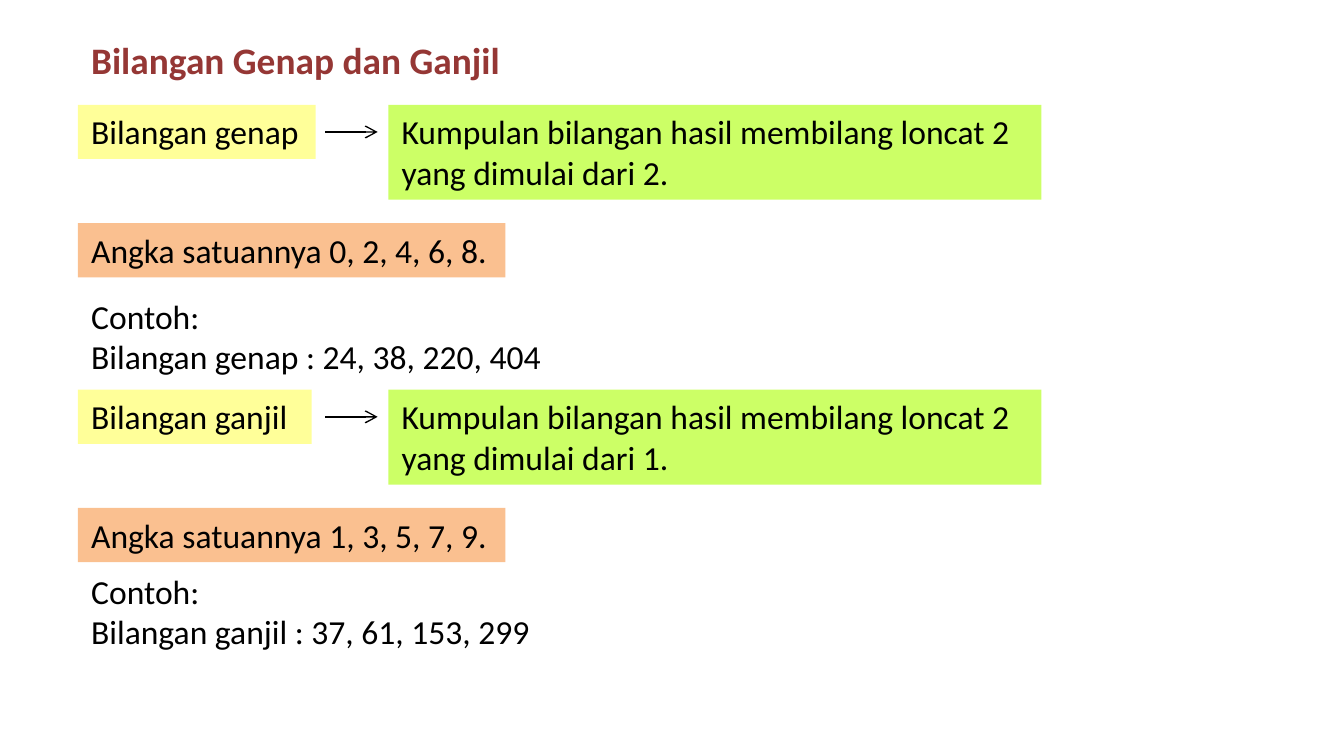
from dataclasses import dataclass
from typing import Optional

from lxml import etree
from pptx import Presentation, util as u
from pptx.dml import color
from pptx.enum import shapes, text
from pptx.oxml import ns


@dataclass(frozen=True)
class Theme:
    font: str = "Calibri"
    title_size: float = 20
    body_size: float = 18
    title: str = "953735"
    ink: str = "000000"
    term: str = "FFFF99"
    meaning: str = "CCFF66"
    digits: str = "FAC090"
    line_width: float = 0.75


@dataclass(frozen=True)
class Section:
    top: float
    term: str
    term_width: float
    start: int
    digits: str
    examples: str
    example_offset: float
    example_width: float


THEME = Theme()
LEFT = 41.76
MEANING_LEFT = 208.08
ARROW_START, ARROW_END = 174.24, 202.32
ONE_LINE, TWO_LINES = 29.08, 50.9
DIGITS_OFFSET = 63.36

SECTIONS = [
    Section(56.16, "Bilangan genap", 127.44, 2, "0, 2, 4, 6, 8", "24, 38, 220, 404", 98.64, 258.48),
    Section(208.8, "Bilangan ganjil", 125.28, 1, "1, 3, 5, 7, 9", "37, 61, 153, 299", 93.6, 252.72),
]


def add_text(page, content: str, left: float, top: float, width: float, height: float, *,
             fill: Optional[str] = None, size: float = THEME.body_size,
             ink: str = THEME.ink, bold: bool = False, wrap: bool = False) -> None:
    box = page.shapes.add_textbox(u.Pt(left), u.Pt(top), u.Pt(width), u.Pt(height))
    if fill:
        box.fill.solid()
        box.fill.fore_color.rgb = color.RGBColor.from_string(fill)
    frame = box.text_frame
    frame.word_wrap = wrap
    frame.auto_size = text.MSO_AUTO_SIZE.SHAPE_TO_FIT_TEXT
    frame.text = content
    for para in frame.paragraphs:
        for span in para.runs:
            span.font.name = THEME.font
            span.font.size = u.Pt(size)
            span.font.bold = bold
            span.font.color.rgb = color.RGBColor.from_string(ink)


def add_arrow(page, start: float, end: float, middle: float) -> None:
    arrow = page.shapes.add_connector(
        shapes.MSO_CONNECTOR.STRAIGHT, u.Pt(start), u.Pt(middle), u.Pt(end), u.Pt(middle))
    arrow.line.width = u.Pt(THEME.line_width)
    arrow.line.color.rgb = color.RGBColor.from_string(THEME.ink)
    etree.SubElement(arrow.line._get_or_add_ln(), ns.qn("a:tailEnd"), type="arrow")
    etree.SubElement(arrow._element.spPr, ns.qn("a:effectLst"))


def add_section(page, section: Section) -> None:
    add_text(page, section.term, LEFT, section.top, section.term_width, ONE_LINE, fill=THEME.term)
    add_arrow(page, ARROW_START, ARROW_END, section.top + ONE_LINE / 2)
    add_text(page, f"Kumpulan bilangan hasil membilang loncat 2 yang dimulai dari {section.start}.",
             MEANING_LEFT, section.top, 349.92, TWO_LINES, fill=THEME.meaning, wrap=True)
    add_text(page, f"Angka satuannya {section.digits}.", LEFT, section.top + DIGITS_OFFSET,
             228.96, ONE_LINE, fill=THEME.digits)
    add_text(page, f"Contoh:\n{section.term} : {section.examples}", LEFT,
             section.top + section.example_offset, section.example_width, TWO_LINES)


def main() -> None:
    deck = Presentation()
    deck.slide_width, deck.slide_height = u.Pt(720), u.Pt(405)
    page = deck.slides.add_slide(deck.slide_layouts[6])
    add_text(page, "Bilangan Genap dan Ganjil", LEFT, 16.56, 235.44, 31.5,
             size=THEME.title_size, ink=THEME.title, bold=True)
    for section in SECTIONS:
        add_section(page, section)
    deck.save("out.pptx")


if __name__ == "__main__":
    main()
